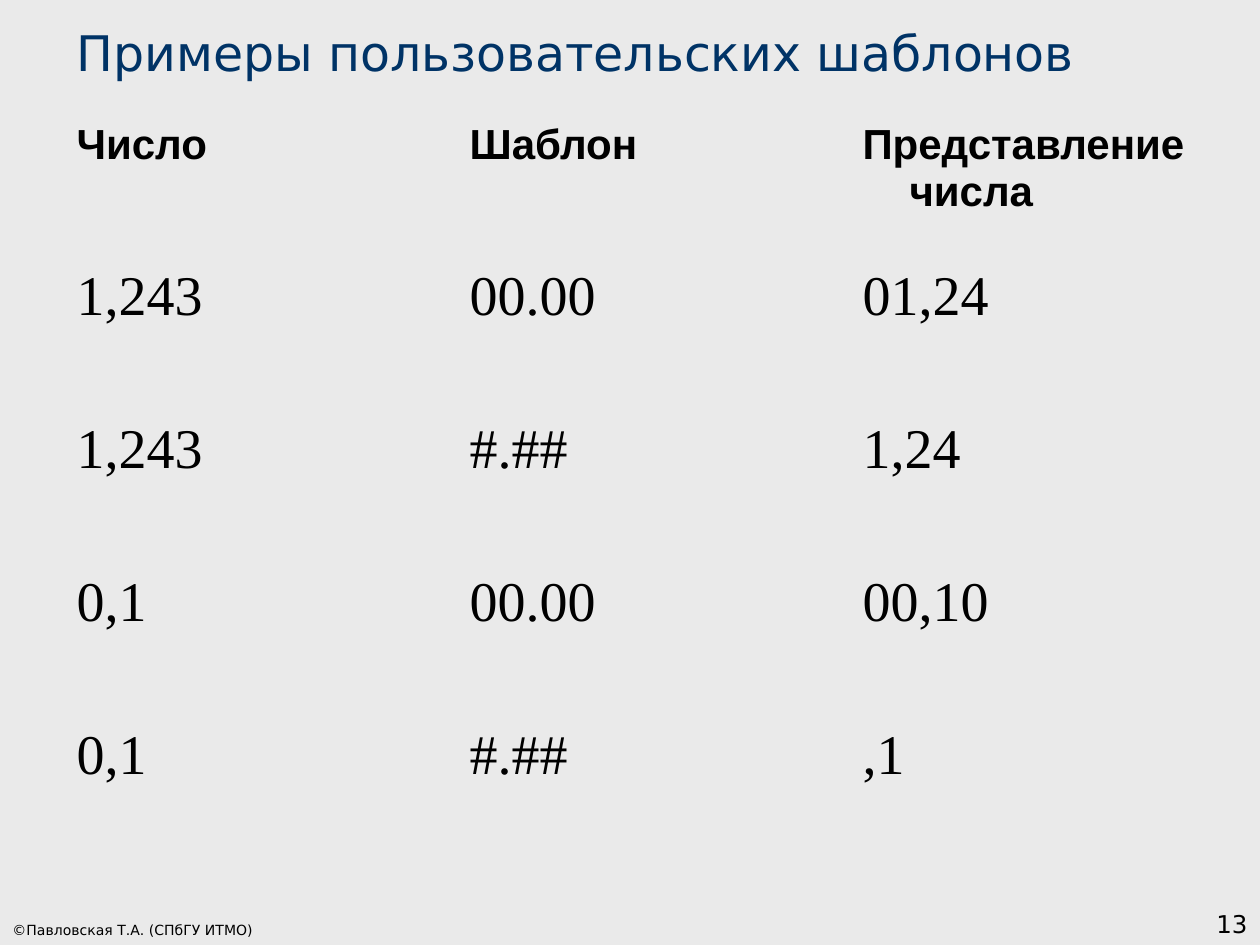
from dataclasses import dataclass

from pptx import Presentation
from pptx.dml.color import RGBColor
from pptx.enum.text import MSO_ANCHOR, MSO_AUTO_SIZE, PP_ALIGN
from pptx.util import Pt

LEFT, RIGHT = PP_ALIGN.LEFT, PP_ALIGN.RIGHT
BOTTOM = MSO_ANCHOR.BOTTOM
FIT_SHAPE = MSO_AUTO_SIZE.SHAPE_TO_FIT_TEXT
PLAIN_TABLE_STYLE = "{2D5ABB26-0587-4C30-8999-92F81FD0307C}"


@dataclass(frozen=True)
class Theme:
    background: RGBColor = RGBColor(0xEA, 0xEA, 0xEA)
    title: RGBColor = RGBColor(0x00, 0x33, 0x66)
    text: RGBColor = RGBColor(0x00, 0x00, 0x00)
    main_font: str = "DejaVu Sans"
    header_font: str = "Arial"
    body_font: str = "Times New Roman"
    title_size: int = 28
    header_size: int = 24
    body_size: int = 32
    copyright_size: int = 8
    number_size: int = 14


theme = Theme()


def px(value):
    return round(value * 914400 / 126)


def write_text(frame, text, size, font=theme.main_font, color=theme.text,
               bold=False, align=LEFT, hanging=0):
    frame.word_wrap = True
    paragraph = frame.paragraphs[0]
    paragraph.alignment = align
    if hanging:
        properties = paragraph._p.get_or_add_pPr()
        properties.set("marL", str(px(hanging)))
        properties.set("indent", str(-px(hanging)))
    run = paragraph.add_run()
    run.text = text
    run.font.size = Pt(size)
    run.font.name = font
    run.font.bold = bold
    run.font.color.rgb = color


presentation = Presentation()
presentation.slide_width = px(1260)
presentation.slide_height = px(945)
slide = presentation.slides.add_slide(presentation.slide_layouts[5])
slide.background.fill.solid()
slide.background.fill.fore_color.rgb = theme.background

footers = [
    ("©Павловская Т.А. (СПбГУ ИТМО)", 0, 910, 392, 35, theme.copyright_size, LEFT),
    ("13", 998, 882, 262, 63, theme.number_size, RIGHT),
]
for text, left, top, width, height, size, align in footers:
    footer = slide.shapes.add_textbox(px(left), px(top), px(width), px(height))
    footer.text_frame.vertical_anchor = BOTTOM
    write_text(footer.text_frame, text, size, align=align)

title = slide.shapes.title
title.left, title.top, title.width, title.height = px(64), px(16), px(1181), px(72)
title.text_frame.vertical_anchor = BOTTOM
title.text_frame.auto_size = FIT_SHAPE
write_text(title.text_frame, "Примеры пользовательских шаблонов",
           theme.title_size, color=theme.title)

examples = [
    ("Число", "Шаблон", "Представление числа"),
    ("1,243", "00.00", "01,24"),
    ("1,243", "#.##", "1,24"),
    ("0,1", "00.00", "00,10"),
    ("0,1", "#.##", ",1"),
]
column_width, header_height, row_height = 393, 144, 153
column_count, row_count = len(examples[0]), len(examples)
table = slide.shapes.add_table(
    row_count, column_count, px(64), px(115), px(column_width * column_count),
    px(header_height + row_height * (row_count - 1))).table
table.first_row = False
table.horz_banding = False
table._tbl.tblPr[0].text = PLAIN_TABLE_STYLE

for column in table.columns:
    column.width = px(column_width)
for row_index, values in enumerate(examples):
    is_header = row_index == 0
    table.rows[row_index].height = px(header_height if is_header else row_height)
    for column_index, value in enumerate(values):
        cell = table.cell(row_index, column_index)
        cell.fill.background()
        write_text(cell.text_frame, value,
                   theme.header_size if is_header else theme.body_size,
                   font=theme.header_font if is_header else theme.body_font,
                   bold=is_header, hanging=47)

presentation.save("out.pptx")
